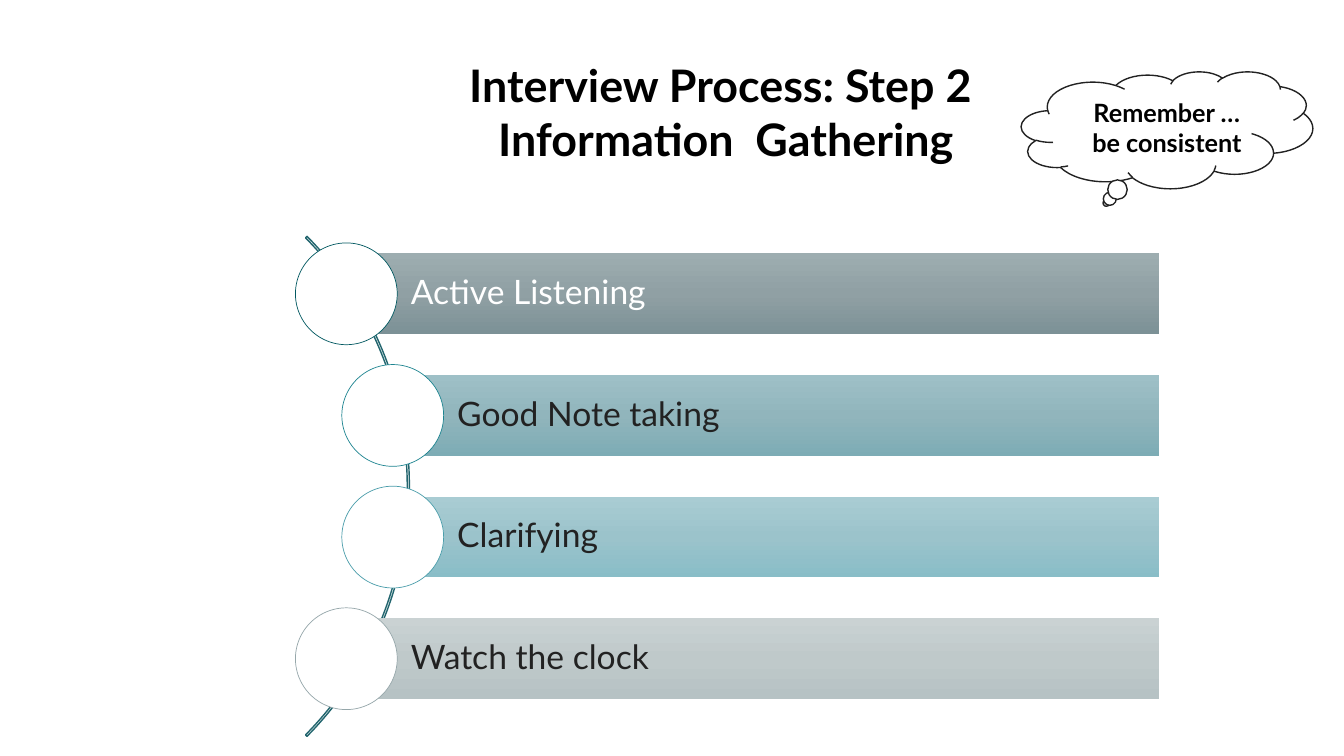
from copy import deepcopy
from dataclasses import dataclass

from pptx import Presentation
from pptx.dml.color import RGBColor
from pptx.enum.shapes import MSO_SHAPE
from pptx.enum.text import MSO_ANCHOR, PP_ALIGN
from pptx.util import Inches, Pt


@dataclass(frozen=True)
class Theme:
    font: str = "Lato"
    black: str = "000000"
    dark: str = "222222"
    white: str = "FFFFFF"
    arc: str = "22656E"
    title_size: int = 32
    bar_size: int = 24
    callout_size: int = 18


THEME = Theme()

# label, text colour, bar gradient, circle outline, indent along the arc
SKILLS = [
    ("Active Listening", THEME.white, ("9DADB0", "90A0A4", "7C9196"), "035961", 0),
    ("Good Note taking", THEME.dark, ("9EC0C7", "91B5BC", "7DACB5"), "1D8490", 0.46),
    ("Clarifying", THEME.dark, ("A9CCD3", "9BC3CB", "89BDC7"), "4C9EAB", 0.46),
    ("Watch the clock", THEME.dark, ("CAD2D3", "BFC9CA", "B6C2C4"), "96A7AA", 0),
]


def add_run(p, text, size, color, bold=False):
    r = p.add_run()
    r.text = text
    r.font.name = THEME.font
    r.font.size = Pt(size)
    r.font.bold = bold
    r.font.color.rgb = RGBColor.from_string(color)


def add_plain_shape(s, kind, box, fill=None, line=None, width=1):
    """Add a shadowless shape; without a colour, its fill or line is off."""
    sp = s.shapes.add_shape(kind, *(Inches(v) for v in box))
    sp.shadow.inherit = False
    if fill:
        sp.fill.solid()
        sp.fill.fore_color.rgb = RGBColor.from_string(fill)
    else:
        sp.fill.background()
    if line:
        sp.line.color.rgb = RGBColor.from_string(line)
        sp.line.width = Pt(width)
    else:
        sp.line.fill.background()
    return sp


def fill_downward(sp, colors):
    """Fill with evenly spaced gradient stops from top to bottom."""
    sp.fill.gradient()
    sp.fill.gradient_angle = 270
    stops = sp._element.spPr.gradFill.gsLst
    while len(stops) < len(colors):
        stops.append(deepcopy(stops[0]))
    for i, (stop, color) in enumerate(zip(sp.fill.gradient_stops, colors)):
        stop.position = i / (len(colors) - 1)
        stop.color.rgb = RGBColor.from_string(color)


def add_title(s, box, lines):
    tf = s.shapes.add_textbox(*(Inches(v) for v in box)).text_frame
    tf.word_wrap = True
    tf.vertical_anchor = MSO_ANCHOR.MIDDLE
    for i, line in enumerate(lines):
        p = tf.add_paragraph() if i else tf.paragraphs[0]
        p.alignment = PP_ALIGN.CENTER
        add_run(p, line, THEME.title_size, THEME.black, bold=True)


def add_skill_bar(s, box, label, text_color, gradient):
    bar = add_plain_shape(s, MSO_SHAPE.RECTANGLE, box)
    fill_downward(bar, gradient)
    tf = bar.text_frame
    tf.word_wrap = True
    tf.vertical_anchor = MSO_ANCHOR.MIDDLE
    tf.margin_left = Inches(0.64)
    tf.margin_right = tf.margin_top = tf.margin_bottom = Inches(0.07)
    p = tf.paragraphs[0]
    p.alignment = PP_ALIGN.LEFT
    p.line_spacing = 0.9
    add_run(p, label, THEME.bar_size, text_color)


def add_skill_list(s, box):
    """Place bars and circles down the box, along an arc centred on its height."""
    left, top, width, height = box
    circle, bar_height, arc_size = 1.01, 0.8, 7.04
    pitch = (height - circle) / (len(SKILLS) - 1)

    arc_box = (left - 5.86, top + (height - arc_size) / 2 + 0.1, 6.99, arc_size)
    arc = add_plain_shape(s, MSO_SHAPE.BLOCK_ARC, arc_box, line=THEME.arc)
    for i, value in enumerate((189, 27, 0.003)):
        arc.adjustments[i] = value

    for i, (label, text_color, gradient, outline, indent) in enumerate(SKILLS):
        x, y = left + indent, top + i * pitch
        bar_x = x + circle / 2
        bar_box = (bar_x, y + (circle - bar_height) / 2, left + width - bar_x, bar_height)
        add_skill_bar(s, bar_box, label, text_color, gradient)
        add_plain_shape(s, MSO_SHAPE.OVAL, (x, y, circle, circle), THEME.white, outline, 0.5)


def add_reminder(s, box, text):
    cloud = add_plain_shape(s, MSO_SHAPE.CLOUD_CALLOUT, box, THEME.white, THEME.dark)
    tf = cloud.text_frame
    tf.word_wrap = True
    tf.vertical_anchor = MSO_ANCHOR.MIDDLE
    tf.margin_left = Inches(0.3)
    p = tf.paragraphs[0]
    p.alignment = PP_ALIGN.CENTER
    add_run(p, text, THEME.callout_size, THEME.black, bold=True)


def main():
    prs = Presentation()
    prs.slide_width, prs.slide_height = Inches(13.33), Inches(7.5)
    s = prs.slides.add_slide(prs.slide_layouts[6])
    add_title(s, (2.96, 0.52, 8.48, 1.18),
              ["Interview Process: Step 2 ", "Information  Gathering"])
    add_skill_list(s, (2.93, 2.41, 8.57, 4.63))
    add_reminder(s, (10.13, 0.71, 2.89, 1.16), "Remember … be consistent")
    prs.save("out.pptx")


if __name__ == "__main__":
    main()
